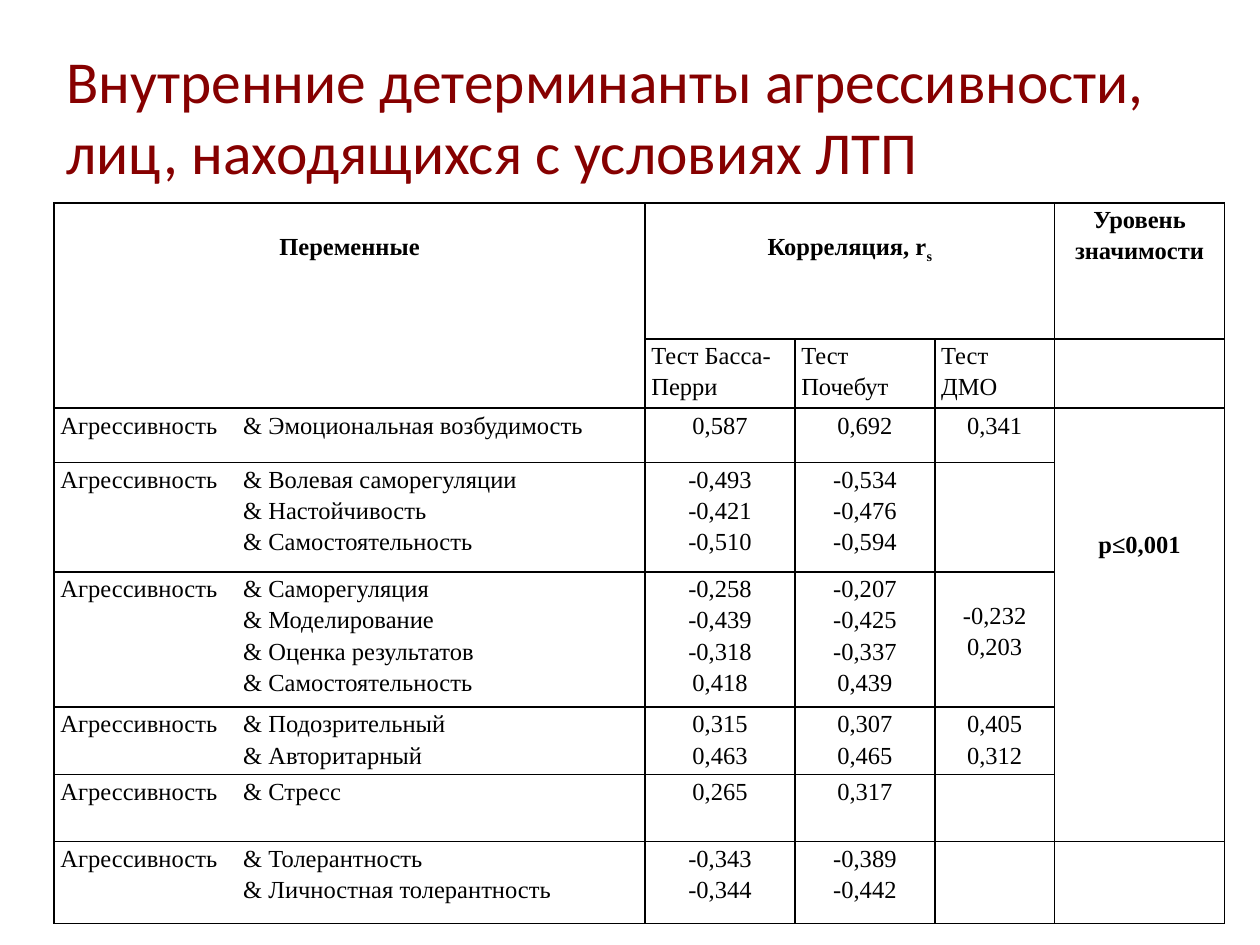
from lxml.etree import SubElement
from pptx import Presentation
from pptx.dml.color import RGBColor
from pptx.enum.text import MSO_ANCHOR as ANCHOR, PP_ALIGN as ALIGN
from pptx.oxml.ns import qn
from pptx.util import Inches, Pt


def color(hex_string):
    return RGBColor.from_string(hex_string)


def style(font, name, size, hex_string, bold=False):
    font.name, font.size, font.bold = name, Pt(size), bold
    font.color.rgb = color(hex_string)


prs = Presentation()
prs.slide_width, prs.slide_height = Inches(10), Inches(7.5)
s = prs.slides.add_slide(prs.slide_layouts[6])
left = Inches(0.43)

# Title
tf = s.shapes.add_textbox(left, Inches(0.29), Inches(9), Inches(1.25)).text_frame
tf.word_wrap = True
tf.vertical_anchor = ANCHOR.MIDDLE
tf.text = "Внутренние детерминанты агрессивности, лиц, находящихся с условиях ЛТП"
style(tf.paragraphs[0].runs[0].font, "Calibri", 34, "860000")

# Table content: a newline starts a paragraph, a tab leads to the second variable
A = "Агрессивность"
rows = [
    ["Переменные", "Корреляция, r", "", "", "Уровень значимости"],
    ["", "Тест Басса-Перри", "Тест Почебут", "Тест ДМО", ""],
    [A + "\t& Эмоциональная возбудимость", "0,587", "0,692", "0,341", "р≤0,001"],
    [A + "\t& Волевая саморегуляции\n\t& Настойчивость\n\t& Самостоятельность",
     "-0,493\n-0,421\n-0,510", "-0,534\n-0,476\n-0,594", "", ""],
    [A + "\t& Саморегуляция\n\t& Моделирование\n\t& Оценка результатов\n\t& Самостоятельность",
     "-0,258\n-0,439\n-0,318\n0,418", "-0,207\n-0,425\n-0,337\n0,439", "-0,232\n0,203", ""],
    [A + "\t& Подозрительный\n\t& Авторитарный",
     "0,315\n0,463", "0,307\n0,465", "0,405\n0,312", ""],
    [A + "\t& Стресс", "0,265", "0,317", "", ""],
    [A + "\t& Толерантность\n\t& Личностная толерантность",
     "-0,343\n-0,344", "-0,389\n-0,442", "", ""],
]
col_widths = [4.69, 1.19, 1.11, 0.95, 1.35]
row_heights = [1.08, 0.55, 0.43, 0.87, 1.05, 0.53, 0.53, 0.65]
top_margins = {(0, 0): 0.21, (0, 1): 0.21, (2, 4): 0.95, (4, 3): 0.21}
bold_cells = [(0, 0), (0, 1), (0, 4), (2, 4)]

# Table grid
table = s.shapes.add_table(len(rows), len(col_widths), left, Inches(1.61),
                           Inches(sum(col_widths)), Inches(sum(row_heights))).table
table.first_row = table.horz_banding = False
for column, width in zip(table.columns, col_widths):
    column.width = Inches(width)
for row, height in zip(table.rows, row_heights):
    row.height = Inches(height)
for first, last in [((0, 0), (1, 0)), ((0, 1), (0, 3)), ((2, 4), (6, 4))]:
    table.cell(*first).merge(table.cell(*last))

# Cells
for i, texts in enumerate(rows):
    for j, text in enumerate(texts):
        cell = table.cell(i, j)
        cell.margin_left = cell.margin_right = Inches(0.05)
        cell.margin_top = Inches(top_margins.get((i, j), 0))
        cell.margin_bottom = 0
        tcPr = cell._tc.get_or_add_tcPr()
        for side in ("a:lnL", "a:lnR", "a:lnT", "a:lnB"):
            ln = SubElement(tcPr, qn(side), w=str(Pt(1)))
            SubElement(SubElement(ln, qn("a:solidFill")), qn("a:srgbClr"), val="000000")
        cell.fill.background()
        if not text:
            continue
        cell.text_frame.text = text
        is_left = i == 1 or (j == 0 and i > 0)
        for p in cell.text_frame.paragraphs:
            p.alignment = ALIGN.LEFT if is_left else ALIGN.CENTER
            p.line_spacing = 1.15
            if "\t" in p.text:
                tabs = SubElement(p._p.get_or_add_pPr(), qn("a:tabLst"))
                SubElement(tabs, qn("a:tab"), pos=str(Inches(1.45)), algn="l")
            for r in p.runs:
                style(r.font, "Times New Roman", 14, "000000", (i, j) in bold_cells)

# Subscript of the correlation coefficient
r = table.cell(0, 1).text_frame.paragraphs[0].add_run()
r.text = "s"
style(r.font, "Times New Roman", 14, "000000", True)
r._r.get_or_add_rPr().set("baseline", "-25000")

prs.save("out.pptx")
